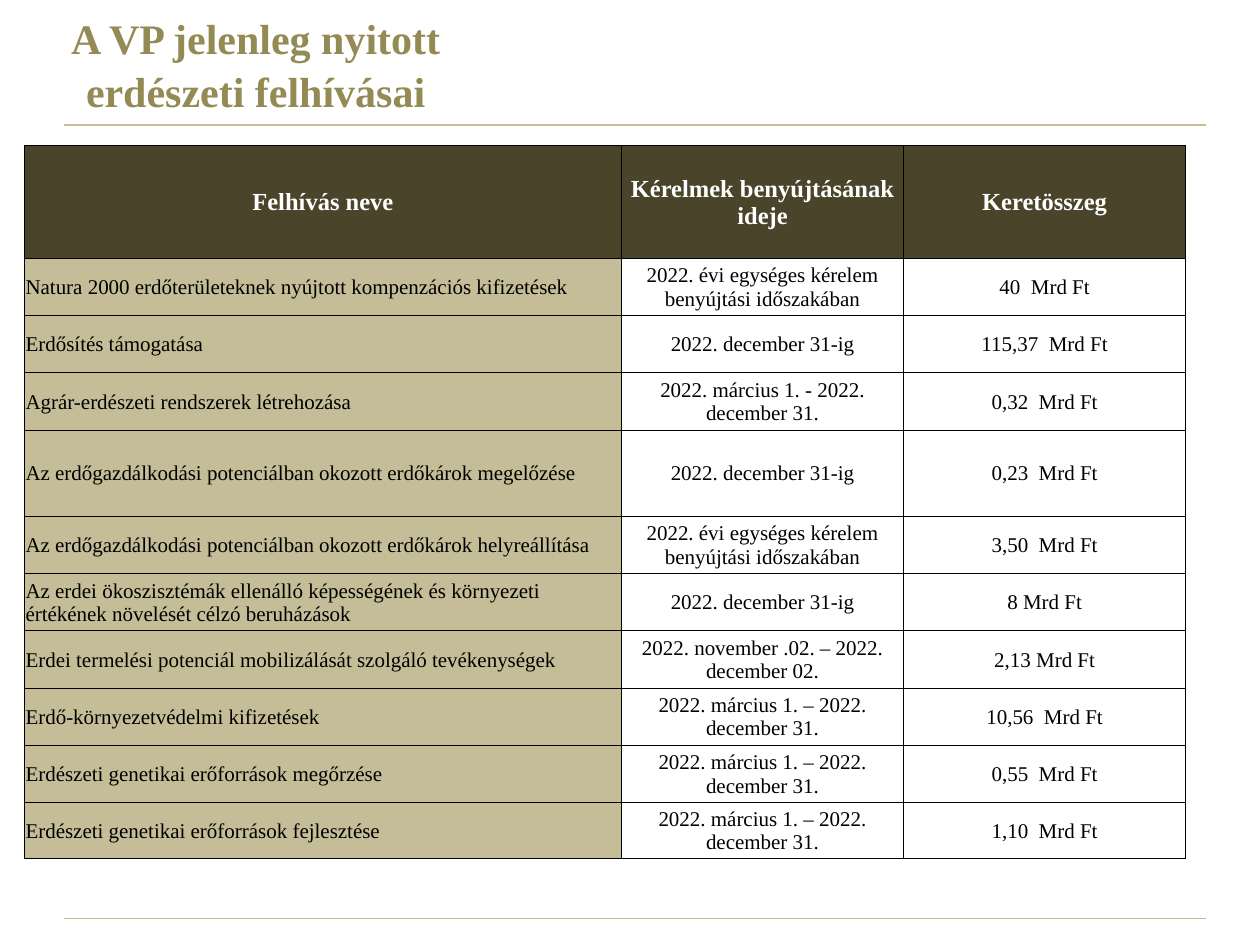
"""Build the slide listing the open forestry calls of the VP."""
from lxml.etree import SubElement
from pptx import Presentation
from pptx.dml.color import RGBColor
from pptx.enum.shapes import MSO_CONNECTOR
from pptx.enum.text import MSO_ANCHOR, PP_ALIGN
from pptx.oxml import parse_xml
from pptx.oxml.ns import nsdecls, qn
from pptx.util import Pt

TITLE = "A VP jelenleg nyitott erdészeti felhívásai"
HEADER = ("Felhívás neve", "Kérelmek benyújtásának ideje", "Keretösszeg")
UNIFIED = "2022. évi egységes kérelem benyújtási időszakában"
YEAR_END = "2022. december 31-ig"
FROM_MARCH = "2022. március 1. – 2022. december 31."
CALLS = [
    ("Natura 2000 erdőterületeknek nyújtott kompenzációs kifizetések", UNIFIED, "40  Mrd Ft"),
    ("Erdősítés támogatása", YEAR_END, "115,37  Mrd Ft"),
    ("Agrár-erdészeti rendszerek létrehozása", "2022. március 1. - 2022. december 31.", "0,32  Mrd Ft"),
    ("Az erdőgazdálkodási potenciálban okozott erdőkárok megelőzése", YEAR_END, "0,23  Mrd Ft"),
    ("Az erdőgazdálkodási potenciálban okozott erdőkárok helyreállítása", UNIFIED, "3,50  Mrd Ft"),
    ("Az erdei ökoszisztémák ellenálló képességének és környezeti értékének növelését célzó beruházások",
     YEAR_END, "8 Mrd Ft"),
    ("Erdei termelési potenciál mobilizálását szolgáló tevékenységek",
     "2022. november .02. – 2022. december 02.", "2,13 Mrd Ft"),
    ("Erdő-környezetvédelmi kifizetések", FROM_MARCH, "10,56  Mrd Ft"),
    ("Erdészeti genetikai erőforrások megőrzése", FROM_MARCH, "0,55  Mrd Ft"),
    ("Erdészeti genetikai erőforrások fejlesztése", FROM_MARCH, "1,10  Mrd Ft"),
]
COL_WIDTHS = (341.2, 161.2, 161.2)
ROW_HEIGHTS = [64.6] + [32.75] * 3 + [49.2] + [32.75] * 5 + [32]
RULE_YS = (525, 71.5)
RULE_LEFT, RULE_RIGHT = 36.7, 689

FONT = "Times New Roman"
OLIVE = RGBColor(0x94, 0x8A, 0x54)
DARK = RGBColor(0x4A, 0x45, 0x2A)
TAN = RGBColor(0xC4, 0xBD, 0x97)
BLACK = RGBColor(0, 0, 0)
WHITE = RGBColor(0xFF, 0xFF, 0xFF)


def add_text(tf, text, size, color, bold, align):
    p = tf.paragraphs[0]
    p.alignment = align
    r = p.add_run()
    r.text = text
    r.font.name, r.font.size, r.font.bold = FONT, Pt(size), bold
    r.font.color.rgb = color
    return p


def add_rule(s, y):
    line = s.shapes.add_connector(MSO_CONNECTOR.STRAIGHT, Pt(RULE_LEFT), Pt(y), Pt(RULE_RIGHT), Pt(y))
    line.line.color.rgb = TAN
    line.line.width = Pt(0.75)
    SubElement(line._element.spPr, qn("a:effectLst"))


def add_borders(cell):
    tc_pr = cell._tc.get_or_add_tcPr()
    for i, side in enumerate(("lnL", "lnR", "lnT", "lnB")):
        tc_pr.insert(i, parse_xml(
            f'<a:{side} {nsdecls("a")} w="{Pt(0.5)}"><a:solidFill>'
            f'<a:srgbClr val="{BLACK}"/></a:solidFill></a:{side}>'))


def style_cell(cell, text, row, col):
    cell.margin_left = cell.margin_right = cell.margin_top = Pt(0.6)
    cell.margin_bottom = 0
    cell.vertical_anchor = MSO_ANCHOR.MIDDLE
    head = row == 0
    if head or col == 0:
        cell.fill.solid()
        cell.fill.fore_color.rgb = DARK if head else TAN
    else:
        cell.fill.background()
    align = PP_ALIGN.CENTER if head or col else PP_ALIGN.LEFT
    add_text(cell.text_frame, text, 14 if head else 12, WHITE if head else BLACK, head, align)
    add_borders(cell)


def add_calls_table(s):
    rows = [HEADER] + CALLS
    table = s.shapes.add_table(len(rows), len(HEADER), Pt(14), Pt(83),
                               Pt(sum(COL_WIDTHS)), Pt(sum(ROW_HEIGHTS))).table
    table.first_row = table.horz_banding = False
    for column, width in zip(table.columns, COL_WIDTHS):
        column.width = Pt(width)
    for i, (row, height) in enumerate(zip(rows, ROW_HEIGHTS)):
        table.rows[i].height = Pt(height)
        for j, text in enumerate(row):
            style_cell(table.cell(i, j), text, i, j)


def main():
    prs = Presentation()
    prs.slide_width, prs.slide_height = Pt(720), Pt(540)
    s = prs.slides.add_slide(prs.slide_layouts[6])
    for y in RULE_YS:
        add_rule(s, y)
    tf = s.shapes.add_textbox(0, Pt(2.2), Pt(292.3), Pt(67.7)).text_frame
    tf.word_wrap = True
    tf.vertical_anchor = MSO_ANCHOR.MIDDLE
    add_text(tf, TITLE, 24, OLIVE, True, PP_ALIGN.CENTER).line_spacing = 1.05
    add_calls_table(s)
    prs.save("out.pptx")


if __name__ == "__main__":
    main()
